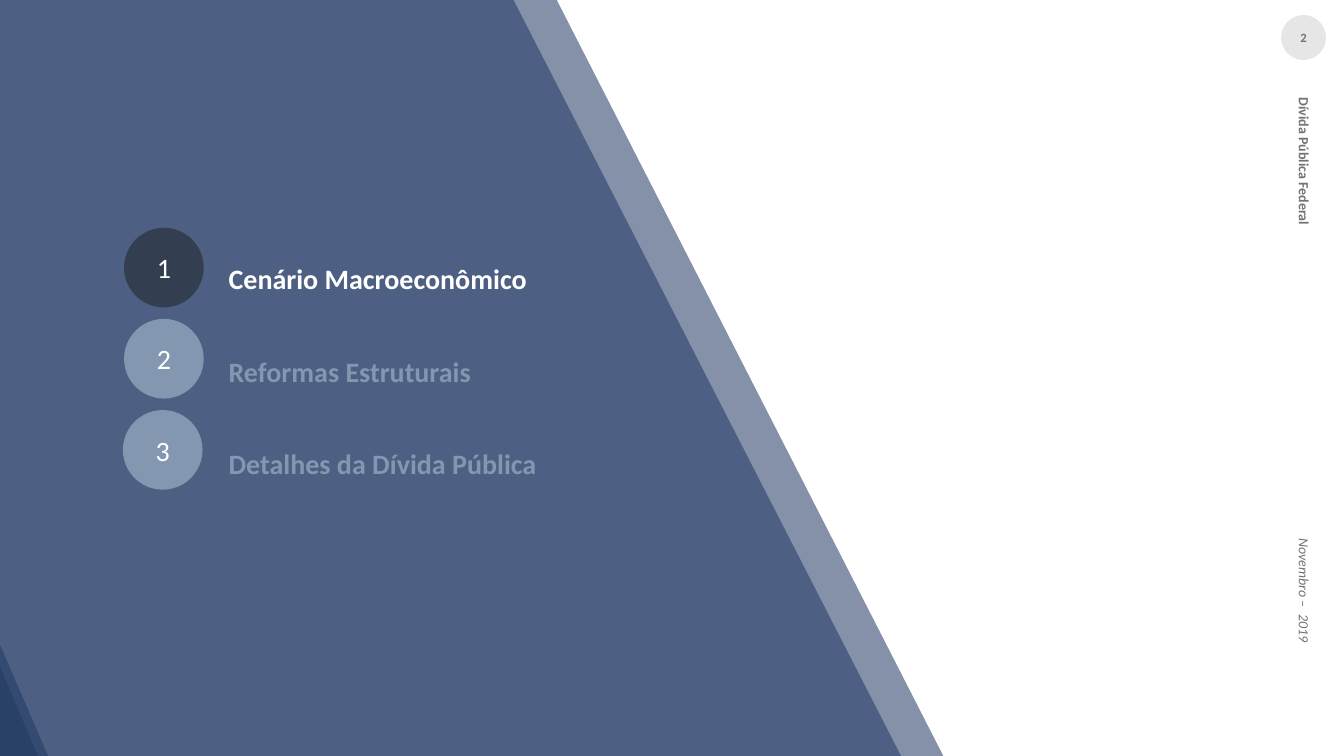
from pptx import Presentation, util as u
from pptx.dml.color import RGBColor
from pptx.enum import shapes, text
from pptx.oxml.ns import qn
from lxml import etree

Pt = u.Pt


def rgb(code):
    return RGBColor.from_string(code)


def disc(left, top, size, fill, label, points, ink, bold=False):
    shape = slide.shapes.add_shape(
        shapes.MSO_SHAPE.OVAL, Pt(left), Pt(top), Pt(size), Pt(size))
    shape.shadow.inherit = False
    shape.fill.solid()
    shape.fill.fore_color.rgb = rgb(fill)
    shape.line.fill.background()
    frame = shape.text_frame
    frame.margin_left = frame.margin_right = 0
    frame.margin_top = frame.margin_bottom = 0
    frame.vertical_anchor = text.MSO_ANCHOR.MIDDLE
    para = frame.paragraphs[0]
    para.text = label
    para.alignment = text.PP_ALIGN.CENTER
    para.font.name = "Calibri"
    para.font.size = Pt(points)
    para.font.bold = bold
    para.font.color.rgb = rgb(ink)


deck = Presentation()
deck.slide_width, deck.slide_height = Pt(960), Pt(540)
slide = deck.slides.add_slide(deck.slide_layouts[6])

disc(915.1, 10.8, 32, "E7E6E6", "2", 9, "767171", True)

side = slide.shapes.add_textbox(Pt(704.9), Pt(253.4), Pt(453.6), Pt(21.6))
side.rotation = 90
frame = side.text_frame
frame.word_wrap = True
frame.margin_left = Pt(32.4)
frame.vertical_anchor = text.MSO_ANCHOR.MIDDLE
para = frame.paragraphs[0]
tabs = etree.SubElement(para._p.get_or_add_pPr(), qn("a:tabLst"))
etree.SubElement(tabs, qn("a:tab"), pos=str(Pt(315)), algn="l")
para.font.name = "Calibri"
para.font.size = Pt(10)
para.font.color.rgb = rgb("767171")
for words, bold in (("Dívida Pública Federal", True), ("\tNovembro –  2019", False)):
    run = para.add_run()
    run.text = words
    run.font.name = "Calibri"
    run.font.size = Pt(10)
    run.font.color.rgb = rgb("767171")
    run.font.bold = bold
    run.font.italic = not bold

panels = [
    [(-2, 541.5), (-1.5, 457), (35.3, 542)],
    [(-1.5, 541), (-2, 471.5), (27.4, 541)],
    [(-3, -3), (396.7, -2), (676.8, 545.8), (-5, 544.3)],
    [(-4.3, -3), (365.8, -2), (646.6, 545.8), (-2, 546.5)],
]
for points in panels:
    start, *rest = [(Pt(x), Pt(y)) for x, y in points]
    path = slide.shapes.build_freeform(*start)
    path.add_line_segments(rest, close=True)
    panel = path.convert_to_shape()
    panel.shadow.inherit = False
    panel.line.fill.background()
    panel.fill.solid()
    panel.fill.fore_color.rgb = rgb("203864")
    tint = panel._element.spPr.find(".//" + qn("a:srgbClr"))
    etree.SubElement(tint, qn("a:alpha"), val="55000")

topics = [
    ("Cenário Macroeconômico", 88.6, "333F50", "FFFFFF"),
    ("Reformas Estruturais", 88.6, "8497B0", "8497B0"),
    ("Detalhes da Dívida Pública", 87.8, "8497B0", "8497B0"),
]
box = slide.shapes.add_textbox(Pt(156.2), Pt(171.4), Pt(385.2), Pt(229))
frame = box.text_frame
frame.word_wrap = True
for i, (topic, left, fill, ink) in enumerate(topics):
    disc(left, 162.7 + 65.1 * i, 56.9, fill, str(i + 1), 20, "FFFFFF")
    para = frame.add_paragraph() if i else frame.paragraphs[0]
    para.text = topic
    para.line_spacing = 1.5
    para.space_after = Pt(30)
    para.font.name = "Calibri"
    para.font.size = Pt(20)
    para.font.bold = True
    para.font.color.rgb = rgb(ink)

deck.save("out.pptx")
